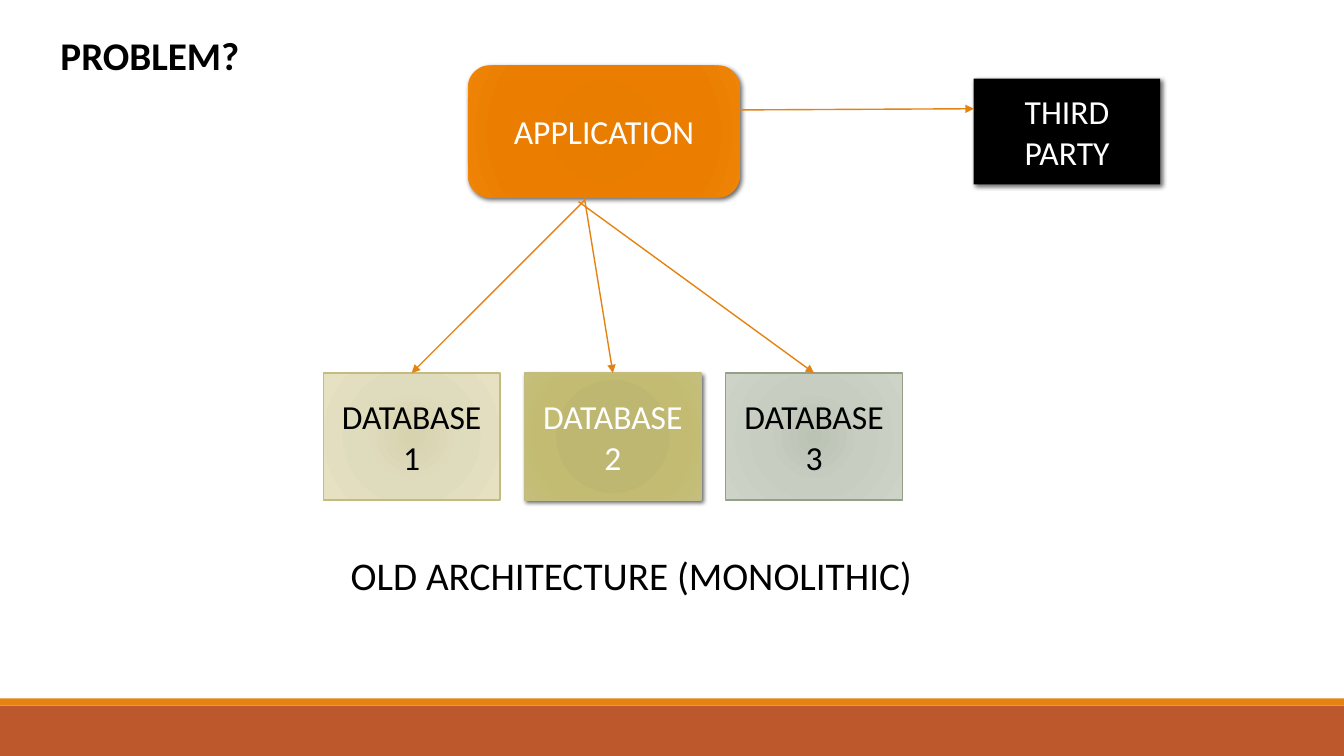
from pptx import Presentation
from pptx.dml.color import RGBColor
from pptx.enum.shapes import MSO_CONNECTOR as Link, MSO_SHAPE as Kind
from pptx.enum.text import MSO_ANCHOR as Anchor, MSO_AUTO_SIZE as Fit, PP_ALIGN as Align
from pptx.oxml import parse_xml
from pptx.oxml.ns import nsdecls, qn
from pptx.util import Cm, Pt

WIDE, HIGH = 33.87, 19.05
ORANGE, RUST, OLIVE, SAGE = "E48312", "BD582C", "C2BC80", "94A088"
BLACK, WHITE = "000000", "FFFFFF"

# Box fills: one colour, or (stop, colour) pairs from the centre outwards
AMBER = [(0, "E57B00"), (34, "E87D00"), (70, "EB7E00"), (100, "EF8407")]
BASES = [
    dict(fill=[(0, "D7D3AF"), (45, "DFDBBD"), (100, "E5E1C1")], line=OLIVE),
    dict(fill=[(0, "BEB76E"), (34, "BEB771"), (70, "C3BB71"), (100, "C5BF7D")],
         line=OLIVE, color=WHITE, blur=3),
    dict(fill=[(0, "BBC3B5"), (45, "C7CDC1"), (100, "CDD4C7")], line=SAGE),
]


def rgb(code):
    return RGBColor.from_string(code)


def node(text):
    """Make a drawing element from text that holds one %s for the namespace."""
    return parse_xml(text.replace("%s", nsdecls("a"), 1))


def write(shape, text, size=24, color=BLACK, bold=False, align=Align.CENTER,
          anchor=Anchor.MIDDLE, wrap=True):
    frame = shape.text_frame
    frame.word_wrap = wrap
    frame.auto_size = Fit.NONE if wrap else Fit.SHAPE_TO_FIT_TEXT
    frame.vertical_anchor = anchor
    line = frame.paragraphs[0]
    line.alignment = align
    run = line.add_run()
    run.text = text
    font = run.font
    font.name, font.size, font.bold = "Calibri", Pt(size), bold
    font.color.rgb = rgb(color)


def radial(shape, stops):
    marks = "".join(f'<a:gs pos="{pos * 1000}"><a:srgbClr val="{code}"/></a:gs>'
                    for pos, code in stops)
    edge = " ".join(f'{side}="100000"' for side in "ltrb")
    shape.element.spPr.insert(2, node(
        f'<a:gradFill %s rotWithShape="1"><a:gsLst>{marks}</a:gsLst>'
        f'<a:path path="circle"><a:fillToRect {edge}/></a:path></a:gradFill>'))


def block(slide, box, fill, text="", kind=Kind.RECTANGLE, line=None, blur=0,
          color=BLACK):
    shape = slide.shapes.add_shape(kind, *map(Cm, box))
    if isinstance(fill, str):
        shape.fill.solid()
        shape.fill.fore_color.rgb = rgb(fill)
    else:
        radial(shape, fill)
    if line:
        shape.line.color.rgb = rgb(line)
        shape.line.width = Pt(1)
    else:
        shape.line.fill.background()
    shape.shadow.inherit = False
    if blur:
        shape.element.spPr.find(qn("a:effectLst")).append(node(
            f'<a:outerShdw %s blurRad="{Pt(blur)}" dist="{Pt(2)}" dir="2700000" '
            f'rotWithShape="0"><a:srgbClr val="{BLACK}"><a:alpha val="60000"/>'
            '</a:srgbClr></a:outerShdw>'))
    if text:
        write(shape, text, color=color)


def arrow(slide, start, end):
    link = slide.shapes.add_connector(Link.STRAIGHT, *map(Cm, start + end))
    link.line.color.rgb = rgb(ORANGE)
    link.line.width = Pt(1)
    props = link.element.spPr
    props.find(qn("a:ln")).append(node('<a:tailEnd %s type="triangle"/>'))
    props.append(node("<a:effectLst %s/>"))


# Two bands along the bottom edge
def footer(slide, box):
    left, top, width, height = box
    strip = 0.18
    block(slide, (left, top + strip, width, height - strip), RUST)
    block(slide, (left, top, width, strip), ORANGE)


# Heading in the title placeholder
def header(slide, box):
    title = slide.shapes.title
    title.left, title.top, title.width, title.height = map(Cm, box)
    write(title, "PROBLEM?", size=28, bold=True, align=Align.LEFT,
          anchor=Anchor.TOP, wrap=False)


# Row of databases; gives back the points where arrows land
def store(slide, box):
    left, top, width, height = box
    wide = 4.45
    step = (width - wide) / (len(BASES) - 1)
    ends = []
    for i, look in enumerate(BASES):
        x = left + i * step
        block(slide, (x, top, wide, height), text=f"DATABASE {i + 1}", **look)
        ends.append((x + wide / 2, top))
    return ends


# Application, with its arrows to the databases
def core(slide, box, ends):
    left, top, width, height = box
    block(slide, box, AMBER, "APPLICATION", kind=Kind.ROUNDED_RECTANGLE,
          blur=3.5, color=WHITE)
    starts = [(2.94, 0.07), (2.92, -0.1), (2.79, 0.1)]
    for (x, drop), end in zip(starts, ends):
        arrow(slide, (left + x, top + height + drop), end)


# Outside service, with the arrow that reaches it
def party(slide, box, start):
    left, top, width, height = box
    block(slide, box, BLACK, "THIRD PARTY", blur=3.5, color=WHITE)
    arrow(slide, start, (left, top + 0.76))


# Caption under the diagram
def label(slide, box):
    shape = slide.shapes.add_textbox(*map(Cm, box))
    write(shape, "OLD ARCHITECTURE (MONOLITHIC)", size=28, align=Align.LEFT,
          anchor=Anchor.TOP, wrap=False)


def main():
    deck = Presentation()
    deck.slide_width, deck.slide_height = Cm(WIDE), Cm(HIGH)
    slide = deck.slides.add_slide(deck.slide_layouts[5])
    footer(slide, (0, 17.6, WIDE, HIGH - 17.6))
    header(slide, (1.27, 0.66, 5.08, 1.45))
    ends = store(slide, (8.15, 9.4, 14.59, 3.2))
    core(slide, (11.79, 1.65, 6.86, 3.33), ends)
    label(slide, (8.59, 13.77, 14.81, 1.45))
    party(slide, (24.54, 1.98, 4.7, 2.67), (18.65, 2.77))
    deck.save("out.pptx")


if __name__ == "__main__":
    main()
